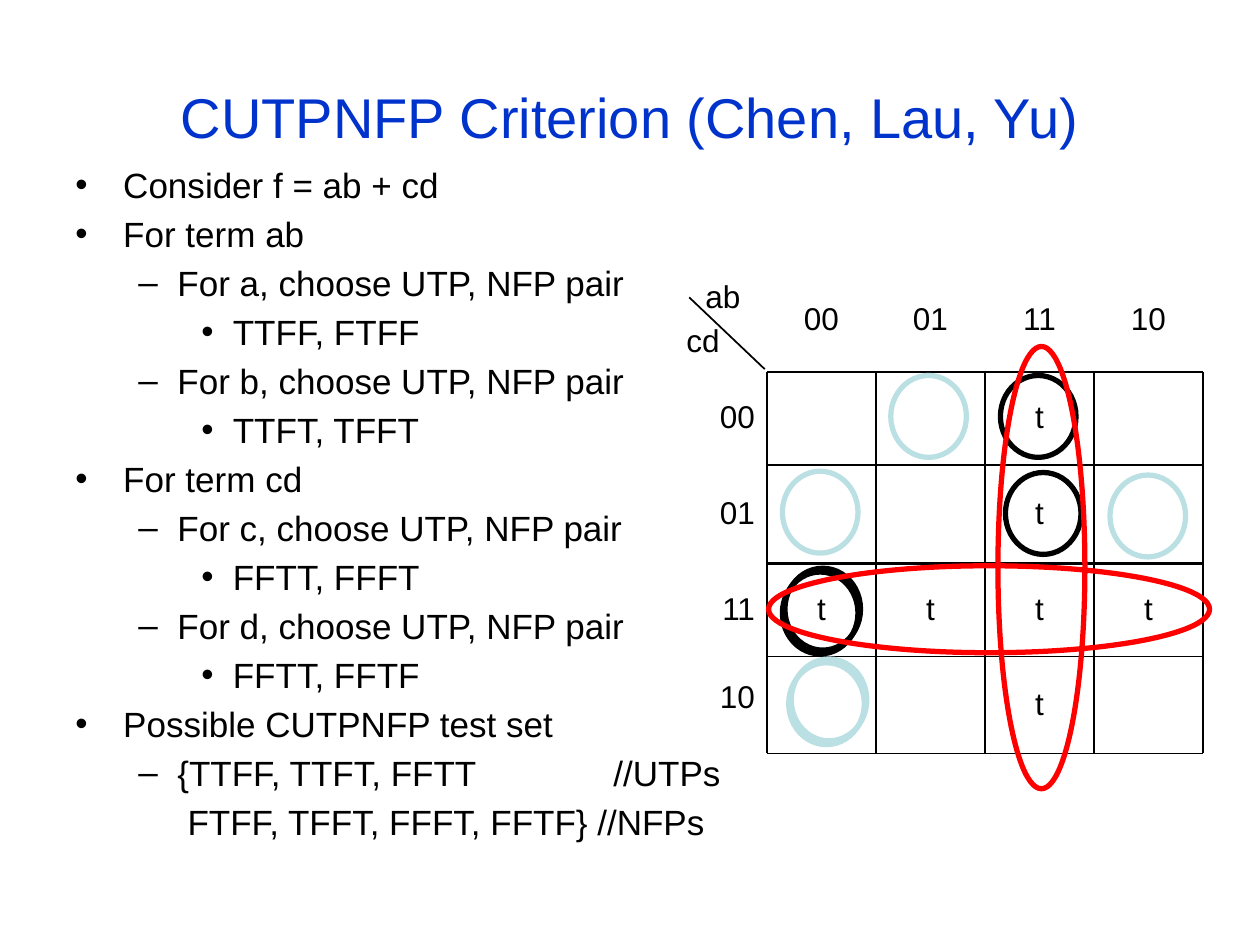
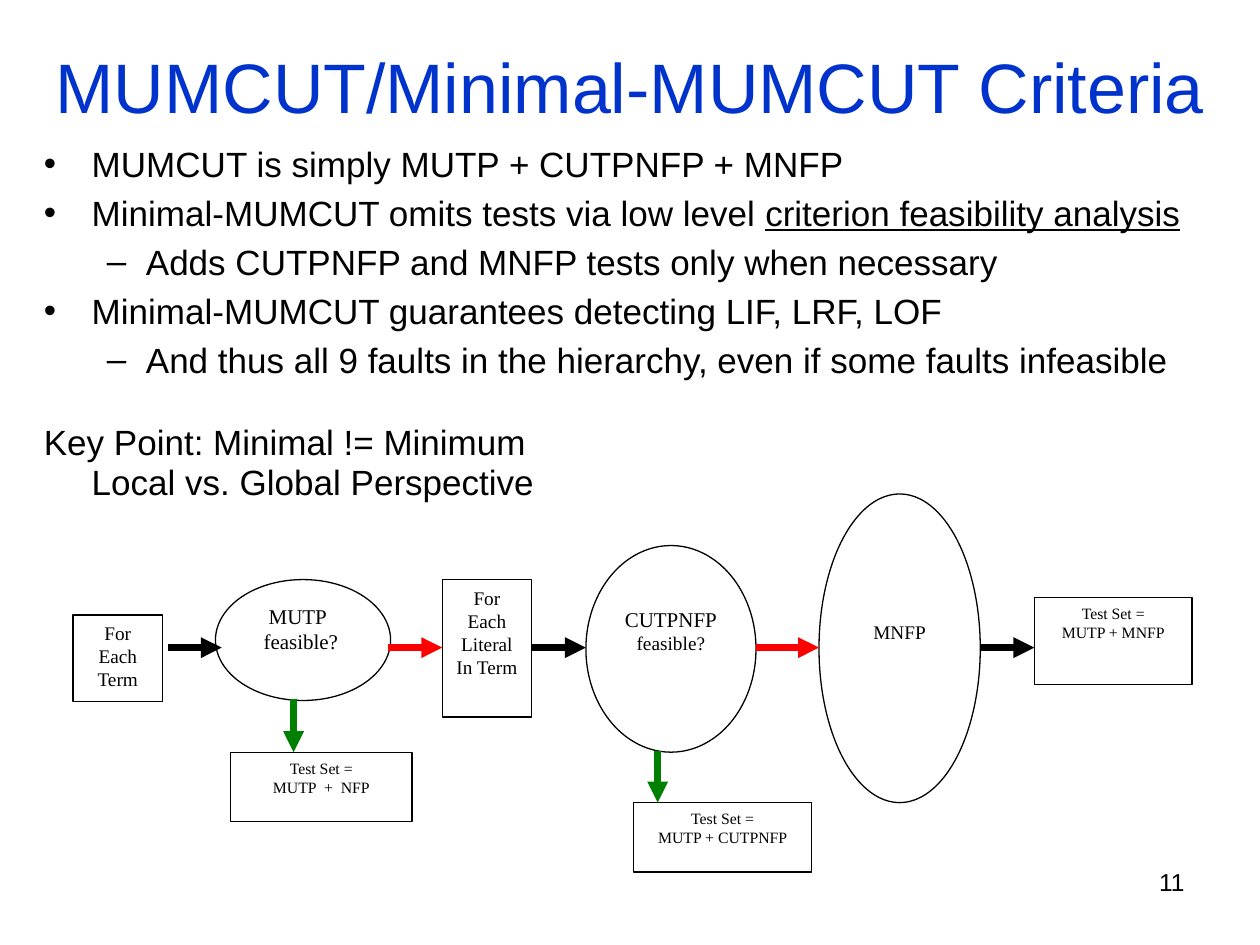
from lxml import etree
from pptx import Presentation
from pptx import util as u
from pptx.dml.color import RGBColor
from pptx.enum import shapes, text
from pptx.oxml import ns

WIDTH, HEIGHT = 10, 7.5
BLACK, WHITE, BLUE, RED, GREEN, PALE = "000000", "FFFFFF", "0033CC", "FF0000", "008000", "BBE0E3"
SANS, SERIF = "Arial", "Times New Roman"
ALIGN = {"left": text.PP_ALIGN.LEFT, "center": text.PP_ALIGN.CENTER, "right": text.PP_ALIGN.RIGHT}

# Outline levels: left margin, hanging indent, bullet
LEVELS = [dict(left=0.38, hang=0.38, bullet="•"),
          dict(left=0.81, hang=0.31, bullet="–"),
          dict(left=1.25, hang=0.25, bullet="•")]

# Each outline line: level, text, changes to the format of its level
CRITERION_OUTLINE = [
    (0, "Consider f = ab + cd", {}),
    (0, "For term ab", {}),
    (1, "For a, choose UTP, NFP pair", {}),
    (2, "TTFF, FTFF", {}),
    (1, "For b, choose UTP, NFP pair", {}),
    (2, "TTFT, TFFT", {}),
    (0, "For term cd", {}),
    (1, "For c, choose UTP, NFP pair", {}),
    (2, "FFTT, FFFT", {}),
    (1, "For d, choose UTP, NFP pair", {}),
    (2, "FFTT, FFTF", {}),
    (0, "Possible CUTPNFP test set", {}),
    (1, "{TTFF, TTFT, FFTT\t//UTPs", dict(tab=4.27)),
    (1, "FTFF, TFFT, FFFT, FFTF} //NFPs", dict(left=0.89, hang=0, bullet=None)),
]
MUMCUT_OUTLINE = [
    (0, "MUMCUT is simply MUTP + CUTPNFP + MNFP", {}),
    (0, "Minimal-MUMCUT omits tests via low level ", dict(underlined="criterion feasibility analysis")),
    (1, "Adds CUTPNFP and MNFP tests only when necessary", {}),
    (0, "Minimal-MUMCUT guarantees detecting LIF, LRF, LOF", {}),
    (1, "And thus all 9 faults in the hierarchy, even if some faults infeasible", {}),
    (0, "Key Point: Minimal != Minimum", dict(bullet=None, line=0.8, before=27.5)),
    (0, "Local vs. Global Perspective", dict(bullet=None, hang=0, line=0.8)),
]

# Karnaugh map: rows are cd, columns are ab; the lower half starts a line of its own
MAP_X = [5.22, 6.09, 6.95, 7.82, 8.68, 9.55]
MAP_Y = [2.13, 2.95, 3.69, 4.47, 5.21, 5.98]
MAP_HALVES = [(2.95, 3.69, 4.48), (4.47, 5.21, 5.98)]
MAP_CELLS = [["", "00", "01", "11", "10"],
             ["00", "", "", "t", ""],
             ["01", "", "", "t", ""],
             ["11", "t", "t", "t", "t"],
             ["10", "", "", "t", ""]]
MAP_CORNER = [("ab", dict(left=0.28)), ("cd", dict(left=0.13))]
LAST_LABEL_RISE = 0.05
POINT_SIZE = (0.6, 0.65)
UNIQUE_TRUE_POINTS = [(7.98, 3.75), (7.94, 2.98), (6.21, 4.54), (6.23, 4.51)]
NEAR_FALSE_POINTS = [(8.81, 3.77), (6.21, 3.74), (6.28, 5.23), (7.07, 2.98), (6.26, 5.26)]
TERM_LOOPS = [(7.92, 2.75, 0.69, 3.51), (6.1, 4.49, 3.5, 0.69)]

# Flow: shape, place, paragraphs, text size, top inset
FLOW_NODES = [
    ("RECTANGLE", (0.58, 4.88, 0.71, 0.69), ["For Each Term"], 11, 0.05),
    ("OVAL", (1.71, 4.6, 1.39, 0.96),
     [("MUTP", dict(align="left", left=0.12)), ("feasible?", dict(align="left", left=0.08))], 12, 0.05),
    ("RECTANGLE", (3.51, 4.6, 0.71, 1.09), ["For Each Literal In Term"], 11, 0.05),
    ("OVAL", (4.65, 4.33, 1.35, 1.64), ["CUTPNFP", ("feasible?", dict(size=11))], 12, 0.24),
    ("OVAL", (6.5, 3.92, 1.28, 2.45), ["MNFP"], 11, 0.64),
    ("RECTANGLE", (8.21, 4.74, 1.25, 0.69), ["Test Set =", "MUTP + MNFP"], 9, 0.05),
    ("RECTANGLE", (1.83, 5.97, 1.44, 0.55), ["Test Set =", "MUTP  +  NFP"], 9, 0.05),
    ("RECTANGLE", (5.03, 6.37, 1.41, 0.55), ["Test Set =", "MUTP + CUTPNFP"], 9, 0.05),
]
FLOW_Y = 5.14
FLOW_ARROWS = [(1.33, 1.76, BLACK), (3.08, 3.51, RED), (4.22, 4.65, BLACK),
               (6, 6.5, RED), (7.78, 8.21, BLACK)]
FEASIBLE_ARROWS = [(2.33, 5.55, 5.97), (5.22, 5.96, 6.37)]


def color(value):
    return RGBColor.from_string(value)


def inches(values):
    return [u.Inches(value) for value in values]


def add_xml(parent, tag, **attributes):
    return etree.SubElement(parent, ns.qn(tag), attributes)


def write(frame, paragraphs, **common):
    """Fill a text frame; a paragraph is a string or a (string, format) pair."""
    frame.word_wrap = True
    for index, item in enumerate(paragraphs):
        words, changes = (item, {}) if isinstance(item, str) else item
        style = dict(size=18, font=SANS, ink=BLACK, align="left", before=0, line=1,
                     left=0, hang=0, bullet=None, tab=None, underlined="")
        style.update(common)
        style.update(changes)
        paragraph = frame.paragraphs[0] if index == 0 else frame.add_paragraph()
        paragraph.alignment = ALIGN[style["align"]]
        paragraph.space_before = u.Pt(style["before"])
        paragraph.line_spacing = float(style["line"])
        properties = paragraph._p.get_or_add_pPr()
        properties.set("marL", str(u.Inches(style["left"])))
        properties.set("indent", str(-u.Inches(style["hang"])))
        if style["bullet"]:
            add_xml(properties, "a:buFont", typeface=style["font"])
            add_xml(properties, "a:buChar", char=style["bullet"])
        if style["tab"]:
            add_xml(add_xml(properties, "a:tabLst"), "a:tab", pos=str(u.Inches(style["tab"])), algn="l")
        for part, underline in ((words, False), (style["underlined"], True)):
            if part:
                run = paragraph.add_run()
                run.text = part
                run.font.size = u.Pt(style["size"])
                run.font.name = style["font"]
                run.font.color.rgb = color(style["ink"])
                run.font.underline = underline


def add_text(slide, place, paragraphs, anchor=text.MSO_ANCHOR.TOP, **style):
    frame = slide.shapes.add_textbox(*inches(place)).text_frame
    frame.vertical_anchor = anchor
    write(frame, paragraphs, **style)


def add_title(slide, place, words, size):
    add_text(slide, place, [words], text.MSO_ANCHOR.MIDDLE, size=size, ink=BLUE, align="center")


def add_outline(slide, place, outline):
    paragraphs = [(words, {**LEVELS[level], **changes}) for level, words, changes in outline]
    add_text(slide, place, paragraphs, size=20, before=4)


def add_outlined(slide, kind, place, ink, width, fill=None):
    shape = slide.shapes.add_shape(getattr(shapes.MSO_SHAPE, kind), *inches(place))
    shape.shadow.inherit = False
    shape.line.color.rgb = color(ink)
    shape.line.width = u.Pt(width)
    if fill:
        shape.fill.solid()
        shape.fill.fore_color.rgb = color(fill)
    else:
        shape.fill.background()
    return shape


def add_line(slide, ends, ink, width, arrow=False):
    connector = slide.shapes.add_connector(shapes.MSO_CONNECTOR.STRAIGHT, *inches(ends))
    connector.line.color.rgb = color(ink)
    connector.line.width = u.Pt(width)
    if arrow:
        add_xml(connector.line._get_or_add_ln(), "a:tailEnd", type="triangle")
    add_xml(connector._element.spPr, "a:effectLst")


def add_map(slide):
    for row, labels in enumerate(MAP_CELLS):
        for column, words in enumerate(labels):
            is_corner = row == column == 0
            if not (words or is_corner):
                continue
            left, top = MAP_X[column], MAP_Y[row]
            width, height = MAP_X[column + 1] - left, MAP_Y[row + 1] - top
            if column == 0 and row == len(MAP_CELLS) - 1:
                top -= LAST_LABEL_RISE
            add_text(slide, (left, top, width, height), MAP_CORNER if is_corner else [words],
                     text.MSO_ANCHOR.MIDDLE, line=0.9, before=6 if is_corner else 0,
                     align="left" if is_corner else "center" if column else "right")
    for levels in MAP_HALVES:
        for y in levels:
            add_line(slide, (MAP_X[1], y, MAP_X[-1], y), BLACK, 1)
        for x in MAP_X[1:]:
            add_line(slide, (x, levels[0], x, levels[-1]), BLACK, 1)
    add_line(slide, (MAP_X[0] + 0.25, MAP_Y[0] + 0.23, MAP_X[1] - 0.02, MAP_Y[1] - 0.02), BLACK, 1)


def build_criterion(slide):
    add_title(slide, (0.5, 0.3, WIDTH - 1, 1.25), "CUTPNFP Criterion (Chen, Lau, Yu)", 32)
    add_outline(slide, (0.5, 1.25, WIDTH - 1, HEIGHT - 1.25), CRITERION_OUTLINE)
    add_map(slide)
    for points, ink in ((UNIQUE_TRUE_POINTS, BLACK), (NEAR_FALSE_POINTS, PALE)):
        for point in points:
            add_outlined(slide, "OVAL", point + POINT_SIZE, ink, 3)
    for loop in TERM_LOOPS:
        add_outlined(slide, "OVAL", loop, RED, 3)


def build_mumcut(slide):
    add_text(slide, (7.17, 6.83, 2.33, 0.52), ["11"], size=14, align="right")
    add_title(slide, (0.1, 0.11, WIDTH - 0.2, 1.14), "MUMCUT/Minimal-MUMCUT Criteria", 40)
    add_outline(slide, (0.25, 1.08, WIDTH - 0.5, 5.75), MUMCUT_OUTLINE)
    for kind, place, paragraphs, size, inset in FLOW_NODES:
        frame = add_outlined(slide, kind, place, BLACK, 0.75, WHITE).text_frame
        frame.vertical_anchor = text.MSO_ANCHOR.TOP
        frame.margin_top = u.Inches(inset)
        write(frame, paragraphs, size=size, font=SERIF, align="center")
    for start, end, ink in FLOW_ARROWS:
        add_line(slide, (start, FLOW_Y, end, FLOW_Y), ink, 4, arrow=True)
    for x, top, bottom in FEASIBLE_ARROWS:
        add_line(slide, (x, top, x, bottom), GREEN, 4, arrow=True)


def main():
    presentation = Presentation()
    presentation.slide_width, presentation.slide_height = inches((WIDTH, HEIGHT))
    for build in (build_criterion, build_mumcut):
        build(presentation.slides.add_slide(presentation.slide_layouts[6]))
    presentation.save("out.pptx")


if __name__ == "__main__":
    main()
